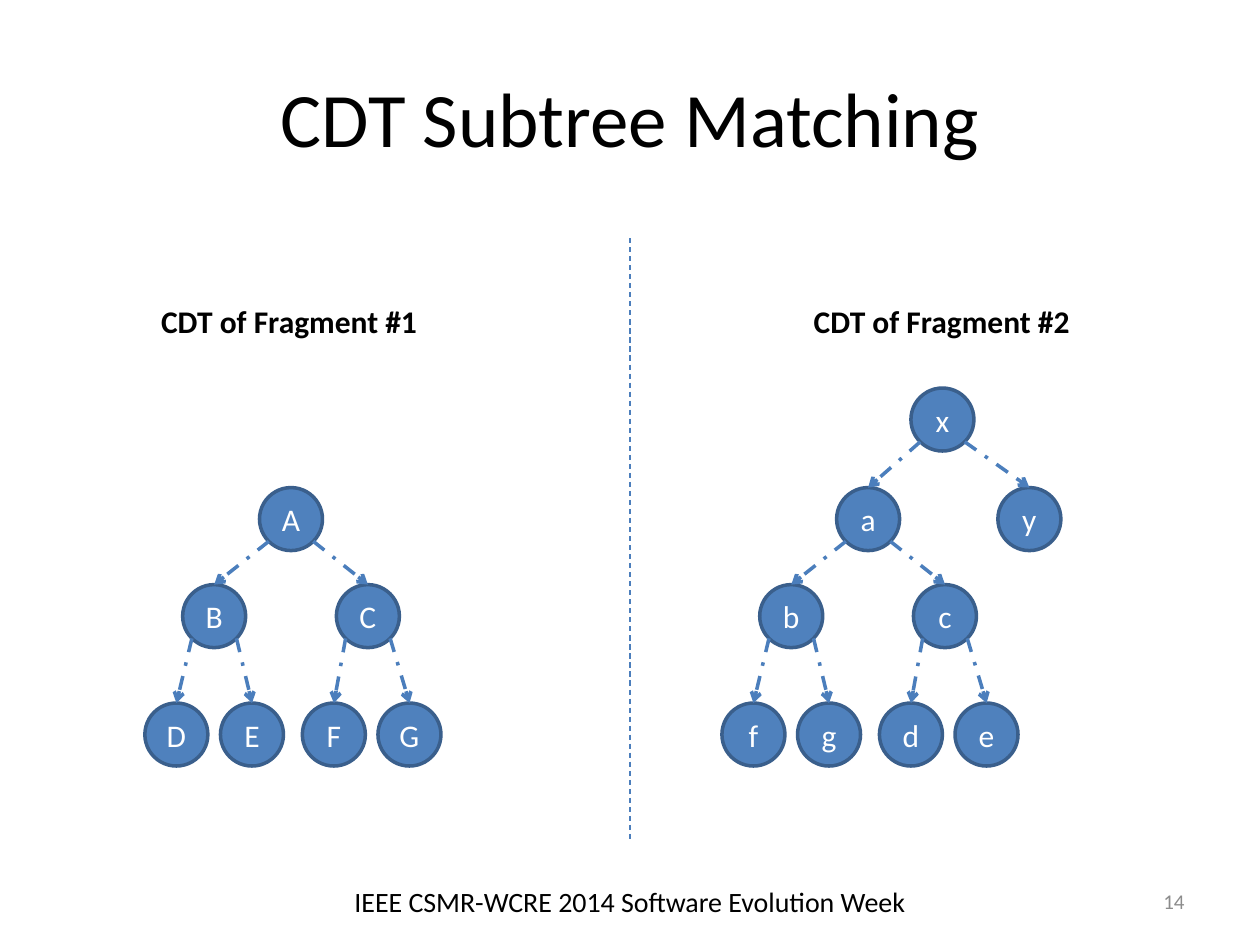
from dataclasses import dataclass
from math import sqrt

from lxml.etree import SubElement
from pptx import Presentation
from pptx.dml.color import RGBColor
from pptx.enum.dml import MSO_LINE
from pptx.enum.shapes import MSO_CONNECTOR, MSO_SHAPE
from pptx.enum.text import MSO_ANCHOR, PP_ALIGN
from pptx.oxml.ns import qn
from pptx.util import Inches, Pt

FONT = "Calibri"
COLORS = {"node": "4F81BD", "rim": "3A5F8C", "edge": "4B7EBC",
          "ink": "000000", "light": "FFFFFF", "gray": "8C8C8C"}
SIZE = 0.5
REACH = SIZE / 2 / sqrt(2)  # from a node's centre to its diagonal rim point
ROWS = [3.08, 3.87, 4.64, 5.58]
SHIFT = 4.58  # from the left tree to the right one


@dataclass
class Node:
    name: str
    left: float
    row: int
    parent: str = ""


@dataclass
class Label:
    text: str
    box: tuple
    size: int
    color: str = "ink"
    align: PP_ALIGN = PP_ALIGN.CENTER
    anchor: MSO_ANCHOR = MSO_ANCHOR.MIDDLE
    bold: bool = False
    wrap: bool = True


def rgb(key: str) -> RGBColor:
    return RGBColor.from_string(COLORS[key])


def write(frame, text: str, size: int, color: str, align: PP_ALIGN,
          anchor: MSO_ANCHOR = MSO_ANCHOR.MIDDLE, bold: bool = False) -> None:
    frame.vertical_anchor = anchor
    para = frame.paragraphs[0]
    para.alignment = align
    run = para.add_run()
    run.text = text
    font = run.font
    font.name, font.size, font.bold = FONT, Pt(size), bold
    font.color.rgb = rgb(color)


def add_label(slide, label: Label) -> None:
    box = slide.shapes.add_textbox(*map(Inches, label.box))
    box.text_frame.word_wrap = label.wrap
    write(box.text_frame, label.text, label.size, label.color,
          label.align, label.anchor, label.bold)


def add_line(slide, start: tuple, end: tuple, width: float, dash: MSO_LINE):
    line = slide.shapes.add_connector(
        MSO_CONNECTOR.STRAIGHT, *map(Inches, start + end))
    line.line.color.rgb = rgb("edge")
    line.line.width = Pt(width)
    line.line.dash_style = dash
    SubElement(line._element.spPr, qn("a:effectLst"))
    return line


def add_node(slide, node: Node):
    disc = slide.shapes.add_shape(
        MSO_SHAPE.OVAL, *map(Inches, (node.left, ROWS[node.row], SIZE, SIZE)))
    disc.shadow.inherit = False
    disc.fill.solid()
    disc.fill.fore_color.rgb = rgb("node")
    disc.line.color.rgb = rgb("rim")
    disc.line.width = Pt(2)
    frame = disc.text_frame
    frame.margin_left = frame.margin_right = 0
    write(frame, node.name, 18, "light", PP_ALIGN.CENTER)
    return disc


def add_edge(slide, parent: Node, child: Node, disc) -> None:
    """Run an arrow from the parent's lower rim to the top of the child."""
    mid = SIZE / 2
    side = REACH if child.left > parent.left else -REACH
    start = (parent.left + mid + side, ROWS[parent.row] + mid + REACH)
    end = (child.left + mid, ROWS[child.row])
    edge = add_line(slide, start, end, 2, MSO_LINE.DASH_DOT)
    edge.end_connect(disc, 0)
    SubElement(edge.line._get_or_add_ln(), qn("a:tailEnd"), type="arrow")


def add_tree(slide, nodes: list[Node]) -> None:
    known = {node.name: node for node in nodes}
    for node in nodes:
        disc = add_node(slide, node)
        if node.parent:
            add_edge(slide, known[node.parent], node, disc)


def subtree(names: str, shift: float = 0, root: str = "") -> list[Node]:
    """Lay out seven names, top row first, as a full binary tree."""
    lefts = [2.06, 1.45, 2.67, 1.15, 1.75, 2.4, 3]
    rows = [1, 2, 2, 3, 3, 3, 3]
    return [Node(name, left + shift, row, names[(i - 1) // 2] if i else root)
            for i, (name, left, row) in enumerate(zip(names, lefts, rows))]


def main() -> None:
    deck = Presentation()
    deck.slide_width, deck.slide_height = Inches(10), Inches(7.5)
    slide = deck.slides.add_slide(deck.slide_layouts[5])

    title = slide.shapes.title
    title.left, title.top = Inches(0.5), Inches(0.3)
    title.width, title.height = Inches(9), Inches(1.25)
    write(title.text_frame, "CDT Subtree Matching", 44, "ink", PP_ALIGN.CENTER)

    add_line(slide, (5, 1.89), (5, 6.67), 0.75, MSO_LINE.DASH)
    add_tree(slide, subtree("ABCDEFG"))
    add_tree(slide, [Node("x", 7.23, 0), Node("y", 7.92, 1, "x"),
                     *subtree("abcfgde", SHIFT, "x")])

    heads = [Label(f"CDT of Fragment #{num}", (left, 2.35, 2.25, 0.4), 18,
                   align=PP_ALIGN.LEFT, anchor=MSO_ANCHOR.TOP,
                   bold=True, wrap=False)
             for num, left in ((1, 1.18), (2, 6.36))]
    foot = Label("IEEE CSMR-WCRE 2014 Software Evolution Week",
                 (0, 6.95, 10, 0.4), 16)
    page = Label("14", (7.17, 6.95, 2.33, 0.4), 12, "gray", PP_ALIGN.RIGHT)
    for label in [*heads, foot, page]:
        add_label(slide, label)

    deck.save("out.pptx")


if __name__ == "__main__":
    main()
